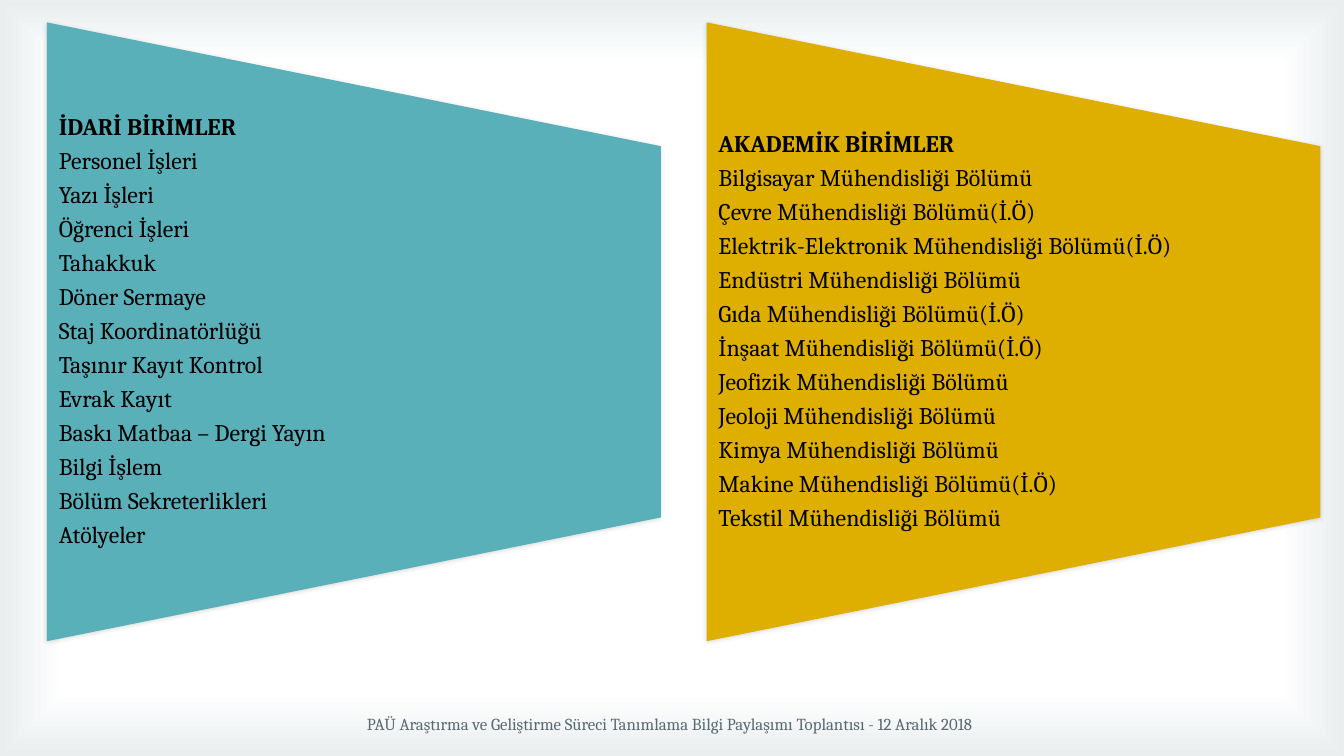
from dataclasses import dataclass

from lxml.etree import SubElement
from pptx import Presentation
from pptx.dml.color import RGBColor
from pptx.enum.shapes import MSO_SHAPE
from pptx.enum.text import MSO_ANCHOR, MSO_AUTO_SIZE, PP_ALIGN
from pptx.oxml import parse_xml
from pptx.oxml.ns import nsdecls, qn
from pptx.util import Pt

# Content
UNITS = [
    ("İDARİ BİRİMLER", [
        "Personel İşleri", "Yazı İşleri", "Öğrenci İşleri", "Tahakkuk",
        "Döner Sermaye", "Staj Koordinatörlüğü", "Taşınır Kayıt Kontrol",
        "Evrak Kayıt", "Baskı Matbaa – Dergi Yayın", "Bilgi İşlem",
        "Bölüm Sekreterlikleri", "Atölyeler",
    ]),
    ("AKADEMİK BİRİMLER", [
        "Bilgisayar Mühendisliği Bölümü", "Çevre Mühendisliği Bölümü(İ.Ö)",
        "Elektrik-Elektronik Mühendisliği Bölümü(İ.Ö)",
        "Endüstri Mühendisliği Bölümü", "Gıda Mühendisliği Bölümü(İ.Ö)",
        "İnşaat Mühendisliği Bölümü(İ.Ö)", "Jeofizik Mühendisliği Bölümü",
        "Jeoloji Mühendisliği Bölümü", "Kimya Mühendisliği Bölümü",
        "Makine Mühendisliği Bölümü(İ.Ö)", "Tekstil Mühendisliği Bölümü",
    ]),
]
FOOTER = ("PAÜ Araştırma ve Geliştirme Süreci Tanımlama Bilgi Paylaşımı "
          "Toplantısı - 12 Aralık 2018")


@dataclass(frozen=True)
class Theme:
    font: str = "Cambria"
    list_size: float = 17
    footer_size: float = 12
    text: str = "000000"
    footer: str = "5B6973"
    panels: tuple = ("59B0B9", "DEAE00")
    center: str = "FFFFFF"
    edge: str = "EAEEEF"


THEME = Theme()

# Layout in points
SLIDE_WIDTH, SLIDE_HEIGHT = 960, 540
PANEL_LEFT, PANEL_TOP, PANEL_STEP = 33.5, 16, 471.2
PANEL_WIDTH, PANEL_HEIGHT = 438.5, 442
LIST_HEIGHT = PANEL_HEIGHT * 0.6
LIST_TOP = PANEL_TOP + (PANEL_HEIGHT - LIST_HEIGHT) / 2


def place(shape, left, top, width, height):
    shape.left, shape.top = Pt(left), Pt(top)
    shape.width, shape.height = Pt(width), Pt(height)


def style_paragraph(paragraph, size, color, bold=False):
    for run in paragraph.runs:
        run.font.name, run.font.size, run.font.bold = THEME.font, Pt(size), bold
        run.font.color.rgb = RGBColor.from_string(color)


def add_background(slide):
    shape = slide.shapes.add_shape(
        MSO_SHAPE.RECTANGLE, 0, 0, Pt(SLIDE_WIDTH), Pt(SLIDE_HEIGHT))
    shape.shadow.inherit = False
    shape.line.fill.background()
    shape.fill.gradient()
    stops = zip(shape.fill.gradient_stops, (0.83, 1), (THEME.center, THEME.edge))
    for stop, position, color in stops:
        stop.position = position
        stop.color.rgb = RGBColor.from_string(color)
    gradient = shape._element.spPr.find(qn("a:gradFill"))
    gradient.replace(gradient.find(qn("a:lin")), parse_xml(
        f'<a:path {nsdecls("a")} path="rect">'
        '<a:fillToRect l="50000" t="50000" r="50000" b="50000"/></a:path>'))


def add_panel(slide, left, color):
    # The frame is turned a quarter, so its sides swap around the same centre
    shift = (PANEL_WIDTH - PANEL_HEIGHT) / 2
    shape = slide.shapes.add_shape(
        MSO_SHAPE.FLOWCHART_MANUAL_OPERATION, Pt(left + shift),
        Pt(PANEL_TOP - shift), Pt(PANEL_HEIGHT), Pt(PANEL_WIDTH))
    shape.rotation = 270
    shape.fill.solid()
    shape.fill.fore_color.rgb = RGBColor.from_string(color)
    shape.line.fill.background()
    shape.shadow.inherit = False
    effects = shape._element.spPr.find(qn("a:effectLst"))
    effects.append(parse_xml(
        f'<a:outerShdw {nsdecls("a")} blurRad="{Pt(3)}" dist="{Pt(1)}" '
        'dir="5400000" rotWithShape="0"><a:srgbClr val="000000">'
        '<a:alpha val="15000"/></a:srgbClr></a:outerShdw>'))


def fill_list(slide, placeholder, left, heading, items):
    slide.shapes._spTree.append(placeholder._element)  # in front of its panel
    place(placeholder, left, LIST_TOP, PANEL_WIDTH, LIST_HEIGHT)
    frame = placeholder.text_frame
    frame.text = "\n".join([heading, *items])
    frame.auto_size = MSO_AUTO_SIZE.NONE
    frame.vertical_anchor = MSO_ANCHOR.MIDDLE
    frame.margin_left = frame.margin_right = Pt(8.5)
    frame.margin_top = frame.margin_bottom = 0
    for index, paragraph in enumerate(frame.paragraphs):
        paragraph.line_spacing = 0.9
        paragraph.space_before = Pt(0)
        paragraph.space_after = Pt(0.35 * THEME.list_size)
        properties = paragraph._p.get_or_add_pPr()
        properties.set("marL", "0")
        properties.set("indent", "0")
        SubElement(properties, qn("a:buNone"))
        style_paragraph(paragraph, THEME.list_size, THEME.text, index == 0)


def add_footer(slide):
    box = slide.shapes.add_textbox(Pt(111), Pt(502.5), Pt(735), Pt(29))
    frame = box.text_frame
    frame.word_wrap = True
    frame.vertical_anchor = MSO_ANCHOR.MIDDLE
    frame.text = FOOTER
    frame.paragraphs[0].alignment = PP_ALIGN.CENTER
    style_paragraph(frame.paragraphs[0], THEME.footer_size, THEME.footer)


def main():
    presentation = Presentation()
    presentation.slide_width = Pt(SLIDE_WIDTH)
    presentation.slide_height = Pt(SLIDE_HEIGHT)
    slide = presentation.slides.add_slide(presentation.slide_layouts[3])
    title, *lists = list(slide.placeholders)
    title._element.getparent().remove(title._element)

    add_background(slide)
    # Two panels, each with its list
    for index, (heading, items) in enumerate(UNITS):
        left = PANEL_LEFT + index * PANEL_STEP
        add_panel(slide, left, THEME.panels[index])
        fill_list(slide, lists[index], left, heading, items)
    add_footer(slide)
    presentation.save("out.pptx")


if __name__ == "__main__":
    main()
